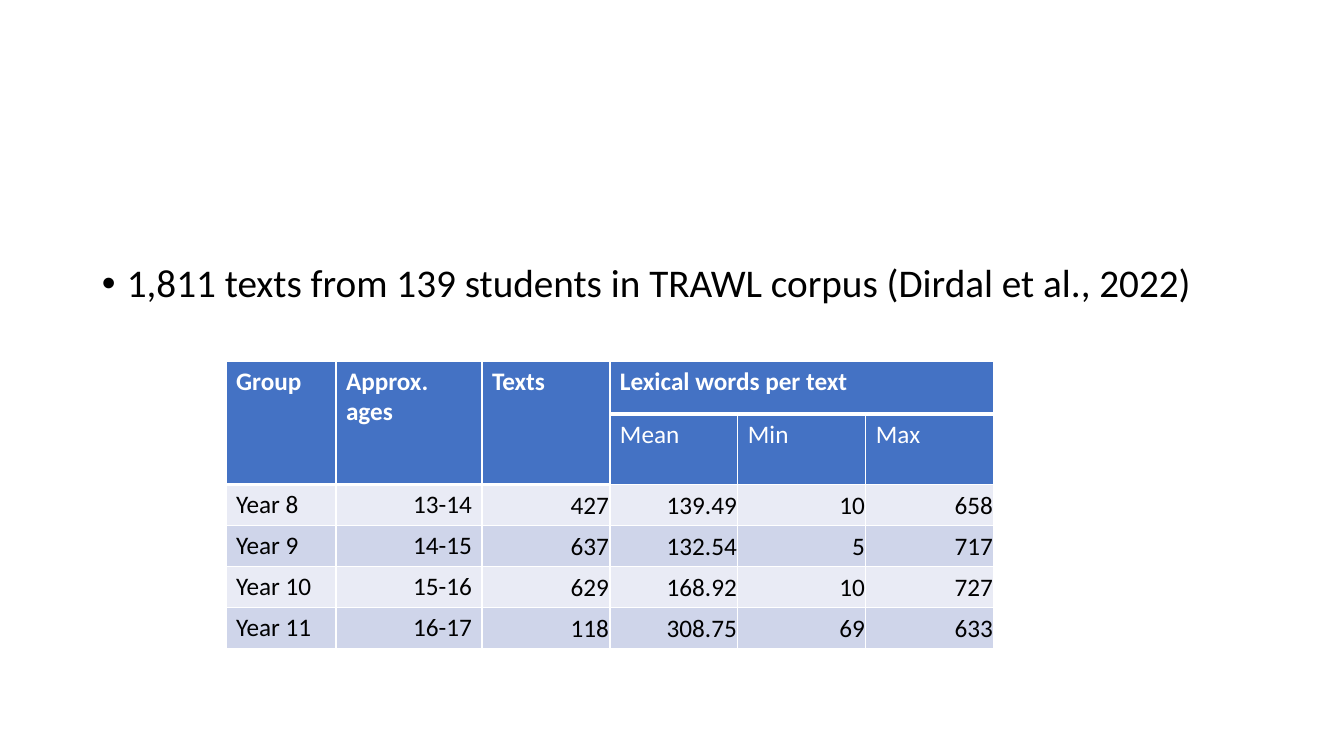
from lxml.etree import SubElement
from pptx import Presentation
from pptx.dml.color import RGBColor as Rgb
from pptx.enum.text import MSO_ANCHOR as Anchor, PP_ALIGN as Align
from pptx.oxml.ns import qn
from pptx.util import Pt

EMU_PER_PX = 914400 / 100.8
COLORS = {
    "text": "000000",
    "white": "FFFFFF",
    "header": "4472C4",
    "light": "E9EBF5",
    "dark": "CFD5EA",
}
COLUMNS = [110, 146, 128, 128, 128, 128]
ROWS = [53, 41, 41, 41, 41, 41]
CORPUS = [
    ["Group", "Approx. ages", "Texts", "Lexical words per text", "", ""],
    ["", "", "", "Mean", "Min", "Max"],
    ["Year 8", "13-14", "427", "139.49", "10", "658"],
    ["Year 9", "14-15", "637", "132.54", "5", "717"],
    ["Year 10", "15-16", "629", "168.92", "10", "727"],
    ["Year 11", "16-17", "118", "308.75", "69", "633"],
]
NUMBER_CELL = {
    "vertical_anchor": Anchor.MIDDLE,
    "margin_left": 1,
    "margin_right": 1,
    "margin_top": 1,
    "margin_bottom": 0,
}


def px(length):
    """Turn pixels into EMU."""
    return round(length * EMU_PER_PX)


def apply(target, values):
    """Set each named attribute on the target."""
    for name, value in values.items():
        setattr(target, name, value)


def write(para, text, size, color, bold=False):
    """Add one formatted run to a paragraph."""
    span = para.add_run()
    span.text = text
    apply(span.font, {"name": "Calibri", "size": Pt(size), "bold": bold})
    span.font.color.rgb = Rgb.from_string(COLORS[color])


def add_bullet(page, text, left, top, width, height):
    """Add a text box holding one bulleted line."""
    box = page.shapes.add_textbox(*map(px, (left, top, width, height)))
    box.text_frame.word_wrap = True
    para = box.text_frame.paragraphs[0]
    para.line_spacing = 0.9
    props = para._p.get_or_add_pPr()
    props.set("marL", str(px(25)))
    props.set("indent", str(px(-25)))
    SubElement(props, qn("a:buFont"), typeface="Arial")
    SubElement(props, qn("a:buChar"), char="•")
    write(para, text, 28, "text")


def rule_below(row, column):
    """Give the width in points of the rule under a cell."""
    return 3 if row == 0 or (row == 1 and column < 3) else 1


def add_borders(cell, row, column):
    """Draw the white rules around a cell."""
    props = cell._tc.get_or_add_tcPr()
    widths = {
        "a:lnL": 1,
        "a:lnR": 1,
        "a:lnT": rule_below(row - 1, column),
        "a:lnB": rule_below(row, column),
    }
    for tag, width in widths.items():
        line = SubElement(props, qn(tag), w=str(Pt(width)))
        fill = SubElement(line, qn("a:solidFill"))
        SubElement(fill, qn("a:srgbClr"), val=COLORS["white"])


def fill_cell(cell, text, row, column):
    """Format one table cell by its row and column."""
    is_header = row < 2
    add_borders(cell, row, column)
    cell.fill.solid()
    shade = "header" if is_header else ("light", "dark")[row % 2]
    cell.fill.fore_color.rgb = Rgb.from_string(COLORS[shade])
    para = cell.text_frame.paragraphs[0]
    if not is_header and column > 0:
        para.alignment = Align.RIGHT
    if not is_header and column > 1:
        apply(cell, {name: px(value) if name.startswith("margin") else value
                     for name, value in NUMBER_CELL.items()})
    if text:
        write(para, text, 18, "white" if is_header else "text", row == 0)


def add_corpus_table(page, left, top):
    """Add the table of texts and lexical words per group."""
    frame = page.shapes.add_table(len(ROWS), len(COLUMNS), px(left), px(top),
                                  px(sum(COLUMNS)), px(sum(ROWS)))
    table = frame.table
    for column, width in zip(table.columns, COLUMNS):
        column.width = px(width)
    for row, height in zip(table.rows, ROWS):
        row.height = px(height)
    for row, texts in enumerate(CORPUS):
        for column, text in enumerate(texts):
            fill_cell(table.cell(row, column), text, row, column)
    for column in range(3):
        table.cell(0, column).merge(table.cell(1, column))
    table.cell(0, 3).merge(table.cell(0, 5))


def main():
    """Build the slide and save it."""
    deck = Presentation()
    apply(deck, {"slide_width": px(1344), "slide_height": px(756)})
    page = deck.slides.add_slide(deck.slide_layouts[6])
    add_bullet(page, "1,811 texts from 139 students in TRAWL corpus (Dirdal et al., 2022)",
               92, 259, 1159, 60)
    add_corpus_table(page, 226, 361)
    deck.save("out.pptx")


if __name__ == "__main__":
    main()
